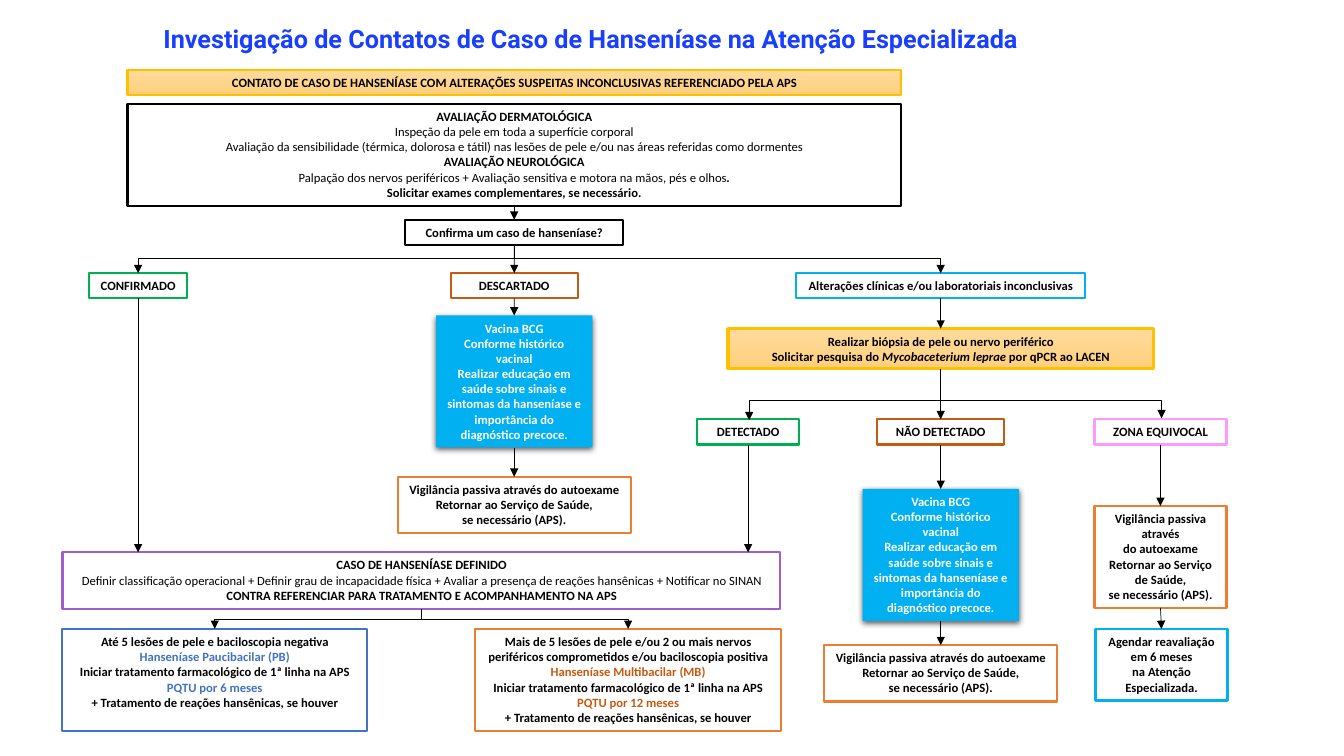
from lxml import etree
from pptx import Presentation
from pptx.dml.color import RGBColor
from pptx.enum.shapes import MSO_CONNECTOR, MSO_SHAPE
from pptx.enum.text import MSO_ANCHOR, PP_ALIGN
from pptx.oxml.ns import qn
from pptx.util import Inches, Pt

RECT = MSO_SHAPE.RECTANGLE
STRAIGHT, ELBOW = MSO_CONNECTOR.STRAIGHT, MSO_CONNECTOR.ELBOW
TOP, MIDDLE = MSO_ANCHOR.TOP, MSO_ANCHOR.MIDDLE
CENTER = PP_ALIGN.CENTER
BLACK, WHITE, ORANGE, BROWN = "000000", "FFFFFF", "ED7D31", "C55A11"
GREEN, SKY, BLUE, GOLD = "00B050", "00B0F0", "4472C4", "FFC000"
PLAIN = {"bold": False}
color = RGBColor.from_string

prs = Presentation()
prs.slide_width, prs.slide_height = Inches(13.33), Inches(7.5)
s = prs.slides.add_slide(prs.slide_layouts[6])


def write(tf, paragraphs, size=9, font="Calibri", ink=BLACK):
    """Fill a frame; a paragraph is a string or a list of (text, format) runs."""
    tf.word_wrap = True
    for i, paragraph in enumerate(paragraphs):
        p = tf.paragraphs[0] if i == 0 else tf.add_paragraph()
        p.alignment = CENTER
        runs = [(paragraph, {})] if isinstance(paragraph, str) else paragraph
        for text, fmt in runs:
            r = p.add_run()
            r.text = text
            r.font.size, r.font.name = Pt(size), font
            r.font.bold = fmt.get("bold", True)
            r.font.italic = fmt.get("italic")
            r.font.color.rgb = color(fmt.get("ink", ink))


def arrow(x1, y1, x2, y2, bend=None, ends=("tailEnd",)):
    """Draw an arrow, in inches; with bend (percent of the drop) it is a vertical elbow."""
    if bend is None:
        cxn = s.shapes.add_connector(STRAIGHT, Inches(x1), Inches(y1), Inches(x2), Inches(y2))
    else:
        # The elbow runs sideways, so lay it out turned and rotate it a quarter.
        mx, my = (x1 + x2) / 2, (y1 + y2) / 2
        dx, dy = (x2 - x1) / 2, (y2 - y1) / 2
        cxn = s.shapes.add_connector(ELBOW, Inches(mx - dy), Inches(my + dx),
                                     Inches(mx + dy), Inches(my - dx))
        cxn._element.spPr.find(qn("a:xfrm")).set("rot", "5400000")
        guides = cxn._element.spPr.find(qn("a:prstGeom")).find(qn("a:avLst"))
        etree.SubElement(guides, qn("a:gd"), name="adj1", fmla=f"val {bend * 1000}")
    cxn.line.width = Pt(0.5)
    cxn.line.color.rgb = color(BLACK)
    spPr = cxn._element.spPr
    for end in ends:
        etree.SubElement(spPr.find(qn("a:ln")), qn(f"a:{end}"), type="triangle")
    etree.SubElement(spPr, qn("a:effectLst"))
    return cxn


title = s.shapes.add_textbox(Inches(0.62), Inches(0.09), Inches(10.48), Inches(0.59))
title.text_frame.vertical_anchor = MIDDLE
write(title.text_frame,
      ["Investigação de Contatos de Caso de Hanseníase na Atenção Especializada"],
      size=18, font="Roboto", ink="183EFF")

vaccine = [
    "Vacina BCG",
    "Conforme histórico vacinal",
    "Realizar educação em saúde sobre sinais e sintomas da hanseníase "
    "e importância do diagnóstico precoce.",
]
return_to_aps = ["Retornar ao Serviço de Saúde,", "se necessário (APS)."]
self_exam = ["Vigilância passiva através do autoexame"] + return_to_aps
treatment = "Iniciar tratamento farmacológico de 1ª linha na APS"
reactions = "+ Tratamento de reações hansênicas, se houver"

# name: centre x, top, width, height, line colour, paragraphs
boxes = {
    "referral": (5.1, 0.69, 7.67, 0.25, GOLD, [
        "CONTATO DE CASO DE HANSENÍASE COM ALTERAÇÕES SUSPEITAS "
        "INCONCLUSIVAS REFERENCIADO PELA APS"]),
    "evaluation": (5.1, 1.03, 7.67, 1.01, BLACK, [
        "AVALIAÇÃO DERMATOLÓGICA",
        [("Inspeção da pele em toda a superfície corporal", PLAIN)],
        [("Avaliação da sensibilidade (térmica, dolorosa e tátil) nas lesões de pele "
          "e/ou nas áreas referidas como dormentes", PLAIN)],
        "AVALIAÇÃO NEUROLÓGICA",
        [("Palpação dos nervos periféricos + Avaliação sensitiva e motora "
          "na mãos, pés e olhos", PLAIN), (".", {})],
        "Solicitar exames complementares, se necessário."]),
    "question": (5.1, 2.18, 2.16, 0.25, BLACK, ["Confirma um caso de hanseníase?"]),
    "confirmed": (1.37, 2.71, 0.97, 0.25, GREEN, ["CONFIRMADO"]),
    "discarded": (5.1, 2.71, 1.26, 0.25, BROWN, ["DESCARTADO"]),
    "inconclusive": (9.33, 2.71, 2.87, 0.25, SKY,
                     ["Alterações clínicas e/ou laboratoriais inconclusivas"]),
    "biopsy": (9.33, 3.26, 4.22, 0.4, GOLD, [
        "Realizar biópsia de pele ou nervo periférico",
        [("Solicitar pesquisa do ", {}), ("Mycobaceterium leprae ", {"italic": True}),
         ("por qPCR ao LACEN", {})]]),
    "detected": (7.42, 4.16, 1.01, 0.25, GREEN, ["DETECTADO"]),
    "not detected": (9.33, 4.16, 1.26, 0.25, BROWN, ["NÃO DETECTADO"]),
    "equivocal": (11.51, 4.16, 1.31, 0.25, "FF99FF", ["ZONA EQUIVOCAL"]),
    "discarded vaccine": (5.1, 3.13, 1.55, 1.31, None, vaccine),
    "discarded self-exam": (5.1, 4.73, 2.31, 0.56, ORANGE, self_exam),
    "undetected vaccine": (9.33, 4.85, 1.55, 1.31, None, vaccine),
    "undetected self-exam": (9.33, 6.4, 2.31, 0.56, ORANGE, self_exam),
    "equivocal self-exam": (11.51, 5.02, 1.31, 1.01, ORANGE,
                            ["Vigilância passiva através", "do autoexame"] + return_to_aps),
    "reassessment": (11.52, 6.24, 1.31, 0.71, SKY, [
        "Agendar reavaliação", "em 6 meses", "na Atenção Especializada."]),
    "defined case": (4.18, 5.48, 7.12, 0.56, "9E5ECE", [
        "CASO DE HANSENÍASE DEFINIDO",
        [("Definir classificação operacional + Definir grau de incapacidade física + "
          "Avaliar a presença de reações hansênicas + Notificar no SINAN", PLAIN)],
        "CONTRA REFERENCIAR PARA TRATAMENTO E ACOMPANHAMENTO NA APS"]),
    "paucibacillary": (2.13, 6.24, 3.03, 1.01, BLUE, [
        "Até 5 lesões de pele e baciloscopia negativa",
        [("Hanseníase Paucibacilar (PB)", {"ink": BLUE})],
        treatment,
        [("PQTU por 6 meses", {"ink": BLUE})],
        reactions]),
    "multibacillary": (6.23, 6.24, 3.03, 1.01, ORANGE, [
        "Mais de 5 lesões de pele e/ou 2 ou mais nervos periféricos "
        "comprometidos e/ou baciloscopia positiva",
        [("Hanseníase Multibacilar (MB)", {"ink": BROWN})],
        treatment,
        [("PQTU por 12 meses", {"ink": BROWN})],
        reactions]),
}

shapes = {}
for name, (cx, top, width, height, line, paragraphs) in boxes.items():
    sp = s.shapes.add_shape(RECT, Inches(cx - width / 2), Inches(top),
                            Inches(width), Inches(height))
    sp.shadow.inherit = False
    if line == GOLD:
        sp.fill.gradient()
        sp.fill.gradient_angle = 270
        for stop, shade in zip(sp.fill.gradient_stops, ("FFDB9E", "FFD07C")):
            stop.color.rgb = color(shade)
    else:
        sp.fill.solid()
        sp.fill.fore_color.rgb = color(WHITE if line else SKY)
    if line:
        sp.line.color.rgb = color(line)
        sp.line.width = Pt(2.25 if name == "biopsy" else 1.5)
    else:
        sp.line.fill.background()
        shadow = etree.SubElement(sp._element.spPr.find(qn("a:effectLst")), qn("a:outerShdw"),
                                  blurRad=str(Pt(4.5)), dist=str(Pt(1.5)),
                                  dir="5400000", rotWithShape="0")
        black = etree.SubElement(shadow, qn("a:srgbClr"), val=BLACK)
        etree.SubElement(black, qn("a:alpha"), val="63000")
    sp.text_frame.vertical_anchor = TOP
    write(sp.text_frame, paragraphs, ink=BLACK if line else WHITE)
    shapes[name] = sp

chains = [
    ("evaluation", "question", "discarded", "discarded vaccine", "discarded self-exam"),
    ("inconclusive", "biopsy", "not detected", "undetected vaccine", "undetected self-exam"),
    ("equivocal", "equivocal self-exam", "reassessment"),
]
for chain in chains:
    for upper, lower in zip(chain, chain[1:]):
        cx, top, _, height = boxes[upper][:4]
        cxn = arrow(cx, top + height, boxes[lower][0], boxes[lower][1])
        cxn.begin_connect(shapes[upper], 2)
        cxn.end_connect(shapes[lower], 0)

for name in ("confirmed", "detected"):
    cx, top, _, height = boxes[name][:4]
    cxn = arrow(cx, top + height, cx, boxes["defined case"][1])
    cxn.begin_connect(shapes[name], 2)

branches = [
    ("question", 46, ("confirmed", "inconclusive")),
    ("defined case", 50, ("paucibacillary", "multibacillary")),
]
for source, bend, targets in branches:
    cx, top, _, height = boxes[source][:4]
    for target in targets:
        arrow(cx, top + height, boxes[target][0], boxes[target][1], bend)

# One two-headed elbow spans the biopsy results, rising above its own ends.
arrow(7.43, 4.17, 11.52, 4.15, bend=1000, ends=("headEnd", "tailEnd"))

prs.save("out.pptx")
